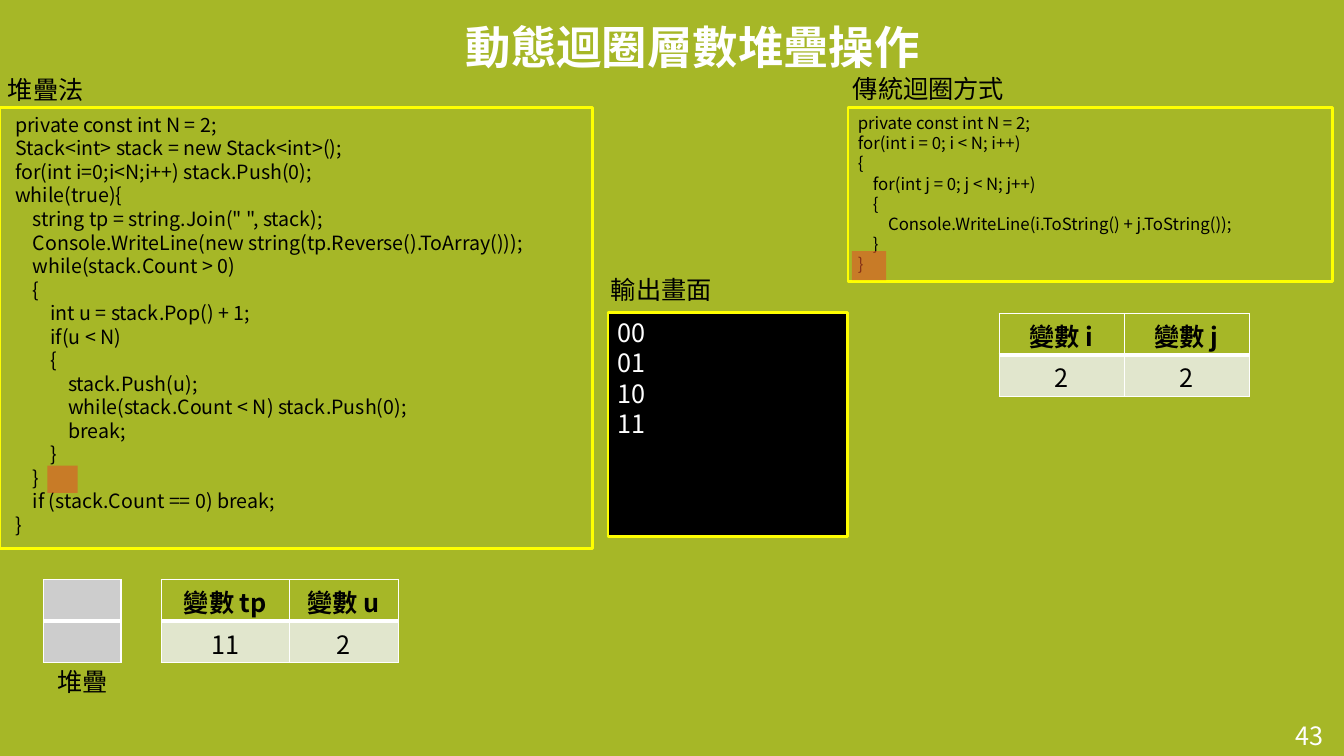
from lxml import etree
from pptx import Presentation
from pptx.dml.color import RGBColor
from pptx.enum.shapes import MSO_SHAPE
from pptx.enum.text import MSO_ANCHOR, PP_ALIGN
from pptx.oxml.ns import qn
from pptx.util import Inches, Pt

RECTANGLE = MSO_SHAPE.RECTANGLE
LEFT, CENTER, RIGHT = PP_ALIGN.LEFT, PP_ALIGN.CENTER, PP_ALIGN.RIGHT
TOP, MIDDLE, BOTTOM = MSO_ANCHOR.TOP, MSO_ANCHOR.MIDDLE, MSO_ANCHOR.BOTTOM

FONT = "Noto Sans CJK SC"
TITLE_FONT = "Calibri"
LINE_FACTOR = 1.2
ROW_HEIGHT = 0.41
COLORS = {
    "green": "A6B727", "yellow": "FFFF00", "black": "000000",
    "white": "FFFFFF", "gray": "CDCDCD", "pale": "E1E6CD", "orange": "DF5327",
}

# Code lines as (nesting depth, text)
STACK_CODE = [
    (0, "private const int N = 2;"),
    (0, "Stack<int> stack = new Stack<int>();"),
    (0, "for(int i=0;i<N;i++) stack.Push(0);"),
    (0, "while(true){"),
    (1, 'string tp = string.Join(" ", stack);'),
    (1, "Console.WriteLine(new string(tp.Reverse().ToArray()));"),
    (1, "while(stack.Count > 0)"),
    (1, "{"),
    (2, "int u = stack.Pop() + 1;"),
    (2, "if(u < N)"),
    (2, "{"),
    (3, "stack.Push(u);"),
    (3, "while(stack.Count < N) stack.Push(0);"),
    (3, "break;"),
    (2, "}"),
    (1, "}"),
    (1, "if (stack.Count == 0) break;"),
    (0, "}"),
]
LOOP_CODE = [
    (0, "private const int N = 2;"),
    (0, "for(int i = 0; i < N; i++)"),
    (0, "{"),
    (1, "for(int j = 0; j < N; j++)"),
    (1, "{"),
    (2, "Console.WriteLine(i.ToString() + j.ToString());"),
    (1, "}"),
    (0, "}"),
]
OUTPUT = [(0, "00"), (0, "01"), (0, "10"), (0, "11")]


def rgb(name):
    return RGBColor.from_string(COLORS[name])


def style_para(para, size, color, align=LEFT, bold=False, name=FONT):
    para.alignment = align
    font = para.font
    font.size, font.bold, font.name = Pt(size), bold, name
    font.color.rgb = rgb(color)
    # East Asian typeface
    latin = para._p.pPr.find(qn("a:defRPr")).find(qn("a:latin"))
    east_asian = etree.Element(qn("a:ea"))
    east_asian.set("typeface", FONT)
    latin.addnext(east_asian)


def write_lines(frame, lines, size, color, align=LEFT, bold=False):
    """Write (depth, text) lines, indenting each by its depth."""
    for number, (depth, text) in enumerate(lines):
        para = frame.add_paragraph() if number else frame.paragraphs[0]
        para.text = text
        style_para(para, size, color, align, bold)
        para.line_spacing = Pt(size * LINE_FACTOR)
        if depth:
            para._p.pPr.set("marL", str(Inches(depth * size / 80)))
            para._p.pPr.set("indent", "0")


def add_label(page, text, left, top, width, height=0.38,
              color="black", align=LEFT, anchor=TOP):
    box = page.shapes.add_textbox(
        Inches(left), Inches(top), Inches(width), Inches(height))
    frame = box.text_frame
    frame.word_wrap = True
    frame.vertical_anchor = anchor
    write_lines(frame, [(0, text)], 18, color, align)


def add_rectangle(page, left, top, width, height):
    shape = page.shapes.add_shape(
        RECTANGLE, Inches(left), Inches(top), Inches(width), Inches(height))
    shape.shadow.inherit = False
    return shape


def add_panel(page, lines, size, left, top, width, height,
              fill=None, color="black", inset=0.1):
    panel = add_rectangle(page, left, top, width, height)
    if fill:
        panel.fill.solid()
        panel.fill.fore_color.rgb = rgb(fill)
    else:
        panel.fill.background()
    panel.line.color.rgb = rgb("yellow")
    panel.line.width = Pt(2)
    frame = panel.text_frame
    frame.word_wrap = True
    frame.vertical_anchor = TOP
    frame.margin_left = Inches(inset)
    write_lines(frame, lines, size, color)


def add_marker(page, left, top, width, height):
    """Translucent block that marks the current code line."""
    marker = add_rectangle(page, left, top, width, height)
    marker.fill.solid()
    marker.fill.fore_color.rgb = rgb("orange")
    marker.line.fill.background()
    color = marker.fill._xPr.find(qn("a:solidFill"))[0]
    etree.SubElement(color, qn("a:alpha")).set("val", "60000")


def set_borders(cell, bottom):
    properties = cell._tc.get_or_add_tcPr()
    widths = {"lnL": 1, "lnR": 1, "lnT": 1, "lnB": bottom}
    for position, (side, width) in enumerate(widths.items()):
        line = etree.Element(qn(f"a:{side}"))
        line.set("w", str(Pt(width)))
        fill = etree.SubElement(line, qn("a:solidFill"))
        etree.SubElement(fill, qn("a:srgbClr")).set("val", COLORS["white"])
        properties.insert(position, line)


def add_grid(page, left, top, widths, rows, fills):
    """Two-row table: a header over a thick rule, then values."""
    grid = page.shapes.add_table(
        len(rows), len(widths), Inches(left), Inches(top),
        Inches(sum(widths)), Inches(ROW_HEIGHT * len(rows))).table
    for column, width in zip(grid.columns, widths):
        column.width = Inches(width)
    for row_number, (texts, fill) in enumerate(zip(rows, fills)):
        header = row_number == 0
        grid.rows[row_number].height = Inches(ROW_HEIGHT)
        for column_number, text in enumerate(texts):
            cell = grid.cell(row_number, column_number)
            cell.margin_top, cell.margin_bottom = Inches(0.1), 0
            cell.fill.solid()
            cell.fill.fore_color.rgb = rgb(fill)
            write_lines(cell.text_frame, [(0, text)], 18, "black", CENTER, header)
            # The value row meets the header at the same thick rule
            set_borders(cell, 3 if header else 1)


def set_title(page, text):
    title = page.shapes.title
    title.left, title.top = Inches(4.4), Inches(0.14)
    title.width, title.height = Inches(4.94), Inches(0.64)
    frame = title.text_frame
    frame.text = text
    frame.word_wrap = True
    frame.vertical_anchor = BOTTOM
    para = frame.paragraphs[0]
    style_para(para, 32.4, "white", CENTER, True, TITLE_FONT)
    para.line_spacing = 0.85


def main():
    deck = Presentation()
    deck.slide_width, deck.slide_height = Inches(13.33), Inches(7.5)
    page = deck.slides.add_slide(deck.slide_layouts[5])
    page.background.fill.solid()
    page.background.fill.fore_color.rgb = rgb("green")
    set_title(page, "動態迴圈層數堆疊操作")

    # Code panels and program output
    add_panel(page, LOOP_CODE, 12, 8.41, 1.07, 4.81, 1.72)
    add_panel(page, STACK_CODE, 14, 0, 1.07, 5.88, 4.37, inset=0.15)
    add_panel(page, OUTPUT, 18, 6.03, 3.1, 2.38, 2.22, "black", "white")

    # Labels and page number
    add_label(page, "堆疊法", -0.02, 0.69, 1.26)
    add_label(page, "傳統迴圈方式", 8.36, 0.68, 1.78)
    add_label(page, "輸出畫面", 5.96, 2.67, 1.58)
    add_label(page, "堆疊", 0.47, 6.56, 0.77, 0.43)
    add_label(page, "43", 12.47, 7.1, 0.75, 0.4, "white", RIGHT, MIDDLE)

    # Stack and variable tables
    add_grid(page, 0.43, 5.75, [0.77], [[""], [""]], ["gray", "gray"])
    add_grid(page, 1.6, 5.75, [1.27, 1.08],
             [["變數 tp", "變數 u"], ["11", "2"]], ["green", "pale"])
    add_grid(page, 9.91, 3.11, [1.24, 1.24],
             [["變數 i", "變數 j"], ["2", "2"]], ["green", "pale"])

    # Current-line markers
    add_marker(page, 0.47, 4.62, 0.3, 0.27)
    add_marker(page, 8.45, 2.49, 0.34, 0.29)

    deck.save("out.pptx")


if __name__ == "__main__":
    main()
